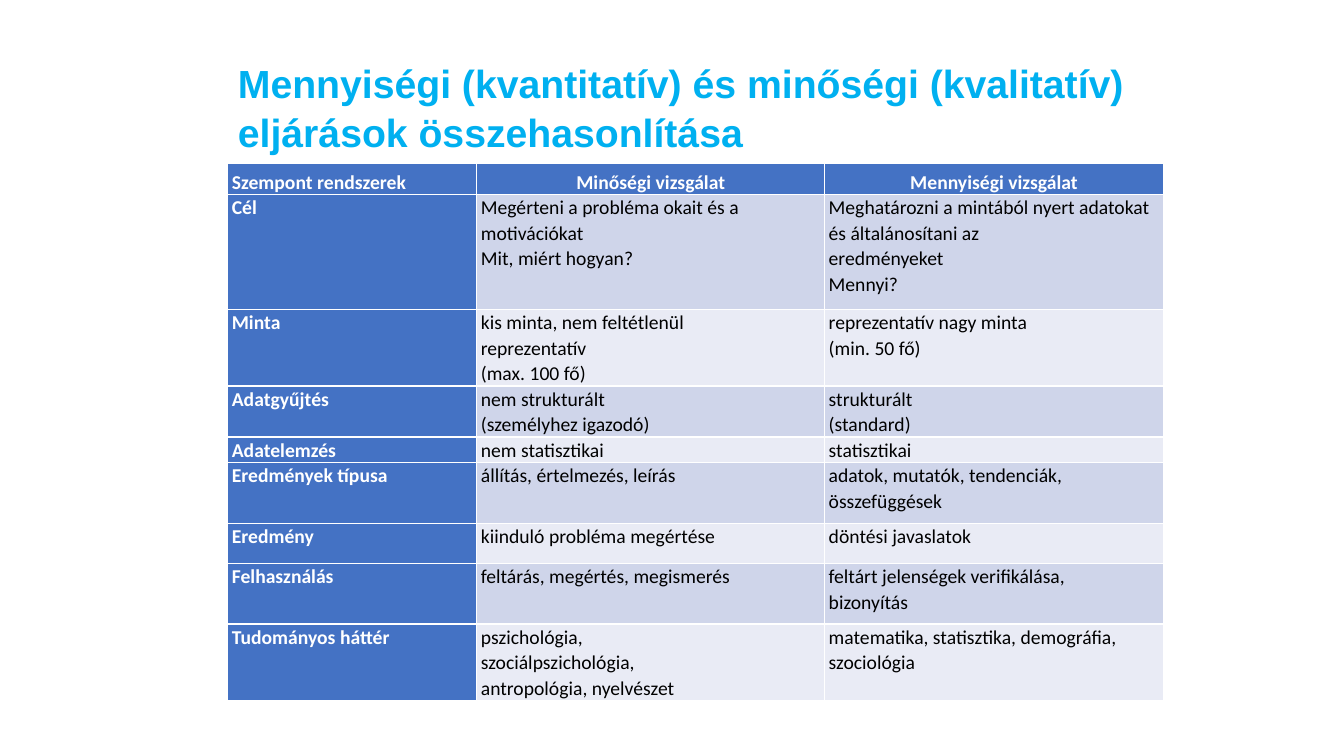
from typing import NamedTuple

from pptx import Presentation
from pptx.dml.color import RGBColor
from pptx.enum.text import MSO_ANCHOR as Anchor, PP_ALIGN as Align
from pptx.slide import Slide
from pptx.table import _Cell as Cell
from pptx.util import Inches, Pt

COLORS = {
    "title": "00B0F0",
    "header": "4472C4",
    "odd_row": "CFD5EA",
    "even_row": "E9EBF5",
    "light_text": "FFFFFF",
    "dark_text": "000000",
}
TITLE = "Mennyiségi (kvantitatív) és minőségi (kvalitatív) eljárások összehasonlítása"
COLUMN_WIDTHS = (2.47, 3.45, 3.36)


class Comparison(NamedTuple):
    height: float
    aspect: str
    qualitative: str
    quantitative: str


COMPARISONS = (
    Comparison(0.31, "Szempont rendszerek", "Minőségi vizsgálat", "Mennyiségi vizsgálat"),
    Comparison(1.14, "Cél",
               "Megérteni a probléma okait és a motivációkat\nMit, miért hogyan?",
               "Meghatározni a mintából nyert adatokat és általánosítani az\veredményeket\vMennyi?"),
    Comparison(0.76, "Minta",
               "kis minta, nem feltétlenül\vreprezentatív\v(max. 100 fő)",
               "reprezentatív nagy minta\v(min. 50 fő)"),
    Comparison(0.4, "Adatgyűjtés",
               "nem strukturált\v(személyhez igazodó)", "strukturált\v(standard)"),
    Comparison(0.2, "Adatelemzés", "nem statisztikai", "statisztikai"),
    Comparison(0.6, "Eredmények típusa",
               "állítás, értelmezés, leírás", "adatok, mutatók, tendenciák,\vösszefüggések"),
    Comparison(0.4, "Eredmény", "kiinduló probléma megértése", "döntési javaslatok"),
    Comparison(0.6, "Felhasználás",
               "feltárás, megértés, megismerés", "feltárt jelenségek verifikálása,\vbizonyítás"),
    Comparison(0.72, "Tudományos háttér",
               "pszichológia,\vszociálpszichológia,\vantropológia, nyelvészet",
               "matematika, statisztika, demográfia,\vszociológia"),
)


def color(name: str) -> RGBColor:
    return RGBColor.from_string(COLORS[name])


def add_title(slide: Slide) -> None:
    title = slide.shapes.title
    title.left, title.top = Inches(2.26), Inches(0.52)
    title.width, title.height = Inches(9.53), Inches(2.89)
    title.text_frame.text = TITLE
    title.text_frame.word_wrap = True
    title.text_frame.vertical_anchor = Anchor.TOP
    paragraph = title.text_frame.paragraphs[0]
    paragraph.alignment = Align.LEFT
    paragraph.line_spacing = 1.04
    paragraph.font.name = "Arial"
    paragraph.font.size = Pt(28)
    paragraph.font.bold = True
    paragraph.font.color.rgb = color("title")


def fill_cell(cell: Cell, text: str, row: int, column: int) -> None:
    is_heading = row == 0 or column == 0
    band = "odd_row" if row % 2 else "even_row"
    cell.fill.solid()
    cell.fill.fore_color.rgb = color("header" if is_heading else band)
    cell.margin_left = cell.margin_right = Inches(0.04)
    cell.margin_top = cell.margin_bottom = 0
    cell.vertical_anchor = Anchor.TOP if row else Anchor.BOTTOM
    cell.text_frame.text = text
    for paragraph in cell.text_frame.paragraphs:
        paragraph.alignment = Align.CENTER if row == 0 and column else Align.LEFT
        paragraph.line_spacing = 1.07
        paragraph.font.name = "Calibri"
        paragraph.font.size = Pt(14)
        paragraph.font.bold = is_heading
        paragraph.font.color.rgb = color("light_text" if is_heading else "dark_text")


def add_comparison_table(slide: Slide) -> None:
    height = sum(comparison.height for comparison in COMPARISONS)
    table = slide.shapes.add_table(
        len(COMPARISONS), len(COLUMN_WIDTHS),
        Inches(2.26), Inches(1.62), Inches(sum(COLUMN_WIDTHS)), Inches(height),
    ).table
    table.first_col = True
    for column, width in zip(table.columns, COLUMN_WIDTHS):
        column.width = Inches(width)
    for row, (row_height, *texts) in enumerate(COMPARISONS):
        table.rows[row].height = Inches(row_height)
        for column, text in enumerate(texts):
            fill_cell(table.cell(row, column), text, row, column)


def main() -> None:
    """Build the slide comparing qualitative and quantitative research."""
    presentation = Presentation()
    presentation.slide_width = Inches(13.33)
    presentation.slide_height = Inches(7.5)
    slide = presentation.slides.add_slide(presentation.slide_layouts[5])
    add_title(slide)
    add_comparison_table(slide)
    presentation.save("out.pptx")


if __name__ == "__main__":
    main()
